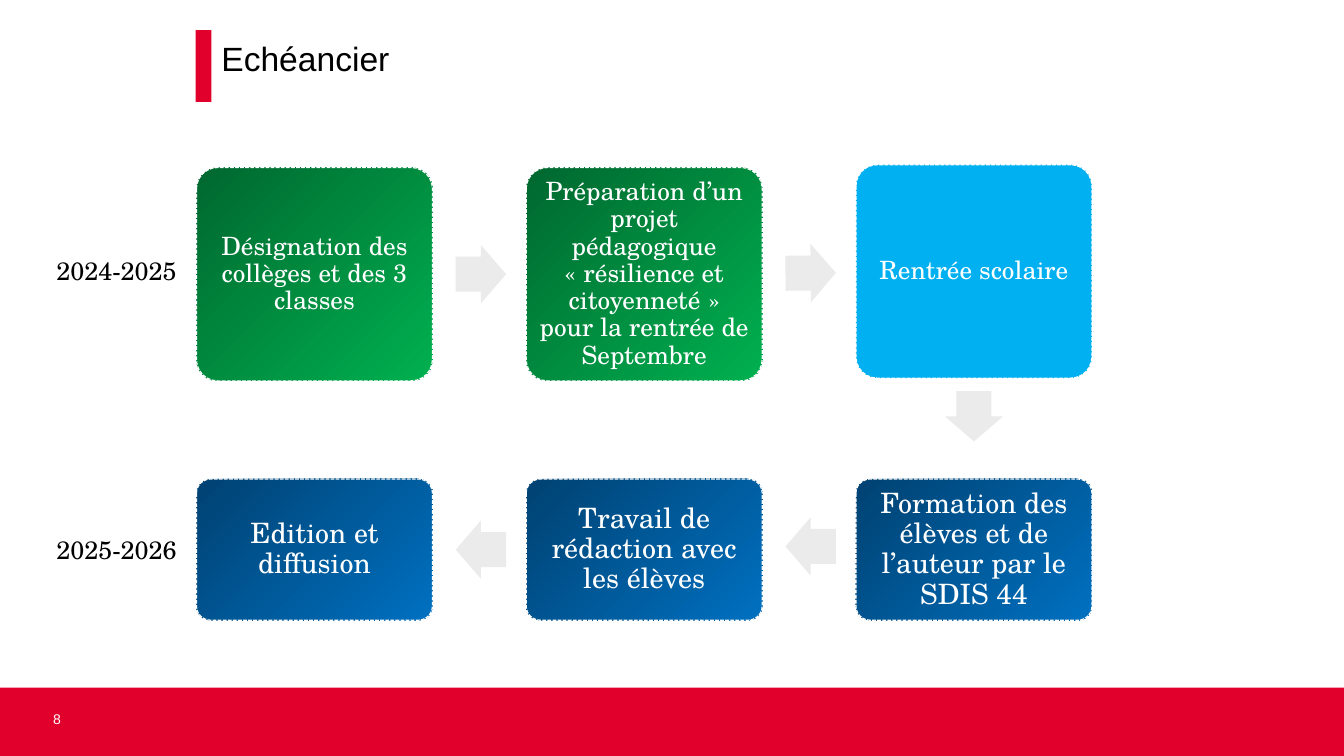
from pptx import Presentation
from pptx.dml.color import RGBColor
from pptx.enum.dml import MSO_LINE
from pptx.enum.shapes import MSO_SHAPE as SHAPE
from pptx.enum.text import MSO_ANCHOR as ANCHOR, PP_ALIGN as ALIGN
from pptx.util import Cm, Pt

RED = RGBColor(0xE0, 0x00, 0x2B)
WHITE = RGBColor(0xFF, 0xFF, 0xFF)
BLACK = RGBColor(0x00, 0x00, 0x00)
GREY = RGBColor(0xEB, 0xEB, 0xEB)
GREEN_DARK = RGBColor(0x00, 0x68, 0x2F)
GREEN = RGBColor(0x00, 0xB0, 0x50)
BLUE_DARK = RGBColor(0x00, 0x42, 0x72)
BLUE = RGBColor(0x00, 0x70, 0xC0)
SKY = RGBColor(0x00, 0xB0, 0xF0)

SANS = "Arial"
SERIF = "TeX Gyre Schola"

SLIDE_W, SLIDE_H = 33.87, 19.05
STEP_W, STEP_PITCH = 5.95, 8.31
ARROW_W, ARROW_H = 1.27, 1.47
ARROW_OFFSET = STEP_W + 1.22


def add_block(slide, shape, x, y, w, h, color):
    sp = slide.shapes.add_shape(shape, Cm(x), Cm(y), Cm(w), Cm(h))
    sp.shadow.inherit = False
    sp.fill.solid()
    sp.fill.fore_color.rgb = color
    sp.line.fill.background()
    return sp


def style_text(p, size, font, color):
    p.font.size = Pt(size)
    p.font.name = font
    p.font.color.rgb = color


def add_label(slide, x, y, w, h, text, size, font, color):
    sp = slide.shapes.add_textbox(Cm(x), Cm(y), Cm(w), Cm(h))
    tf = sp.text_frame
    tf.word_wrap = True
    tf.text = text
    style_text(tf.paragraphs[0], size, font, color)
    return sp


def add_arrow(slide, cx, cy, rotation):
    sp = add_block(slide, SHAPE.RIGHT_ARROW, cx - ARROW_W / 2, cy - ARROW_H / 2,
                   ARROW_W, ARROW_H, GREY)
    sp.adjustments[0] = 0.6
    sp.adjustments[1] = 0.5
    sp.rotation = rotation


def add_step(slide, x, y, h, text, size, inset, colors):
    sp = add_block(slide, SHAPE.ROUNDED_RECTANGLE, x, y, STEP_W, h, colors[0])
    sp.adjustments[0] = 0.1
    if len(colors) > 1:
        sp.fill.gradient()
        sp.fill.gradient_angle = 315
        for stop, color, position in zip(sp.fill.gradient_stops, colors, (0, 1)):
            stop.color.rgb = color
            stop.position = position
    sp.line.color.rgb = WHITE
    sp.line.width = Pt(0.9)
    sp.line.dash_style = MSO_LINE.SQUARE_DOT
    tf = sp.text_frame
    tf.word_wrap = True
    tf.vertical_anchor = ANCHOR.MIDDLE
    tf.margin_left = tf.margin_right = tf.margin_top = tf.margin_bottom = Cm(inset)
    tf.text = text
    p = tf.paragraphs[0]
    p.alignment = ALIGN.CENTER
    p.line_spacing = 0.9
    style_text(p, size, SERIF, WHITE)


def add_title(slide, x, y, text):
    add_block(slide, SHAPE.RECTANGLE, x, y, 0.4, 1.81, RED)
    add_label(slide, x + 0.4, y + 0.08, 19.18, 1.27, text, 24, SANS, BLACK)


def add_footer(slide, y, number):
    add_block(slide, SHAPE.RECTANGLE, 0, y, SLIDE_W, SLIDE_H - y, RED)
    sp = add_label(slide, 0.97, y + 0.46, 2.44, 0.91, number, 10, SANS, WHITE)
    sp.text_frame.margin_left = Cm(0.37)


def add_year(slide, x, y, text):
    add_label(slide, x, y, 4.17, 1.02, text, 18, SERIF, BLACK)


def add_first_year(slide, x, y, h):
    greens = (GREEN_DARK, GREEN)
    steps = [
        ("Désignation des collèges et des 3 classes", greens, 0),
        ("Préparation d’un projet pédagogique «\u00a0résilience et citoyenneté\u00a0» "
         "pour la rentrée de Septembre", greens, 0),
        ("Rentrée scolaire", (SKY,), -0.07),
    ]
    for i, (text, colors, shift) in enumerate(steps):
        add_step(slide, x + i * STEP_PITCH, y + shift, h, text, 18, 0.18, colors)
    middle = y + h / 2
    add_arrow(slide, x + ARROW_OFFSET, middle, 0)
    add_arrow(slide, x + STEP_PITCH + ARROW_OFFSET, middle - 0.03, 359.5)
    add_arrow(slide, x + 2 * STEP_PITCH + STEP_W / 2, y + h + 0.89, 90)


def add_second_year(slide, x, y, h):
    steps = [
        "Edition et diffusion",
        "Travail de rédaction avec les élèves",
        "Formation des élèves et de l’auteur par le SDIS 44",
    ]
    for i, text in enumerate(steps):
        add_step(slide, x + i * STEP_PITCH, y, h, text, 20, 0.2, (BLUE_DARK, BLUE))
    for i, shift in enumerate((0, -0.08)):
        add_arrow(slide, x + i * STEP_PITCH + ARROW_OFFSET, y + h / 2 + shift, 180)


def main():
    prs = Presentation()
    prs.slide_width, prs.slide_height = Cm(SLIDE_W), Cm(SLIDE_H)
    slide = prs.slides.add_slide(prs.slide_layouts[6])
    add_footer(slide, 17.33, "8")
    add_title(slide, 4.93, 0.76, "Echéancier")
    add_first_year(slide, 4.95, 4.22, 5.38)
    add_second_year(slide, 4.95, 12.07, 3.56)
    add_year(slide, 1.17, 6.32, "2024-2025")
    add_year(slide, 1.17, 13.33, "2025-2026")
    prs.save("out.pptx")


if __name__ == "__main__":
    main()
